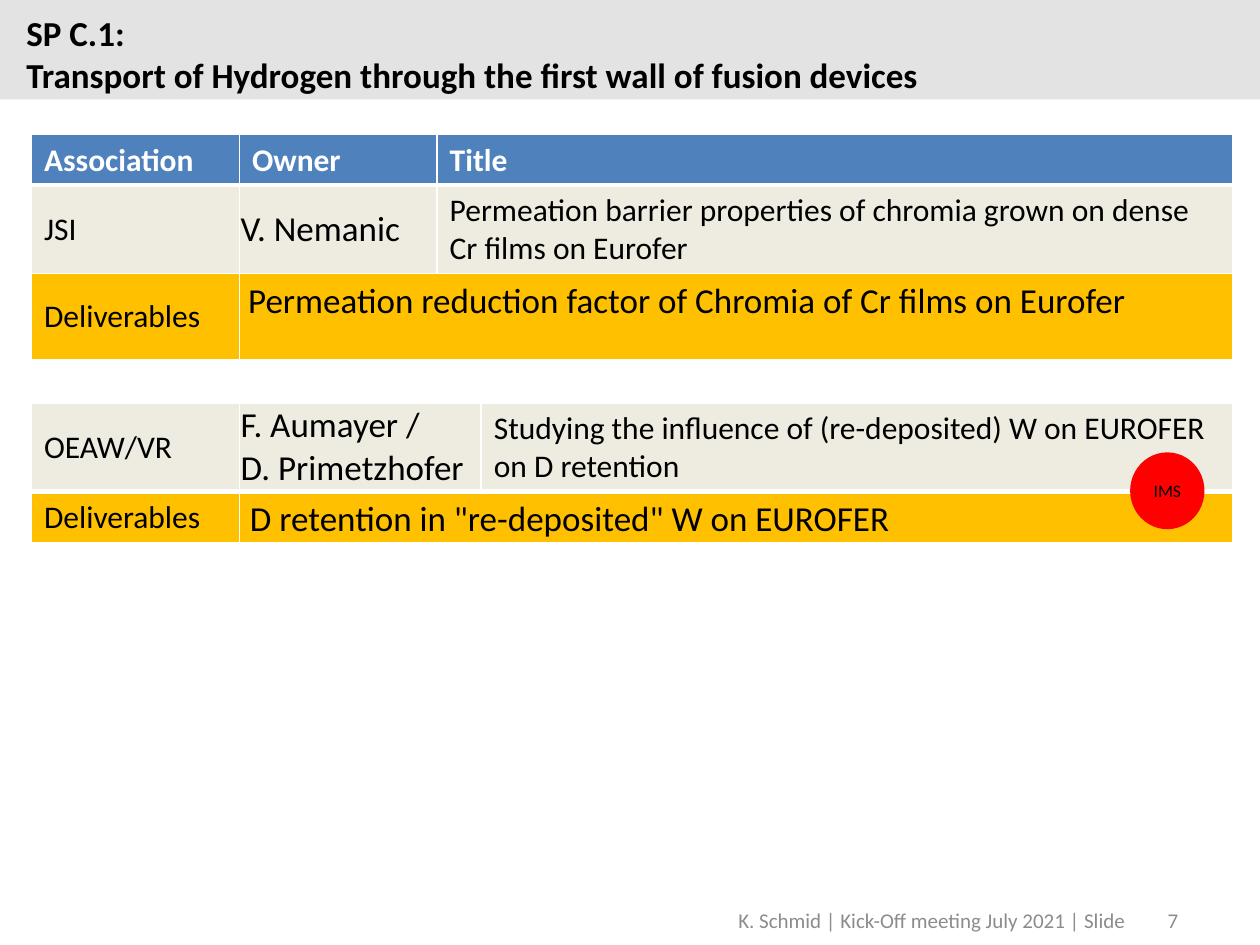
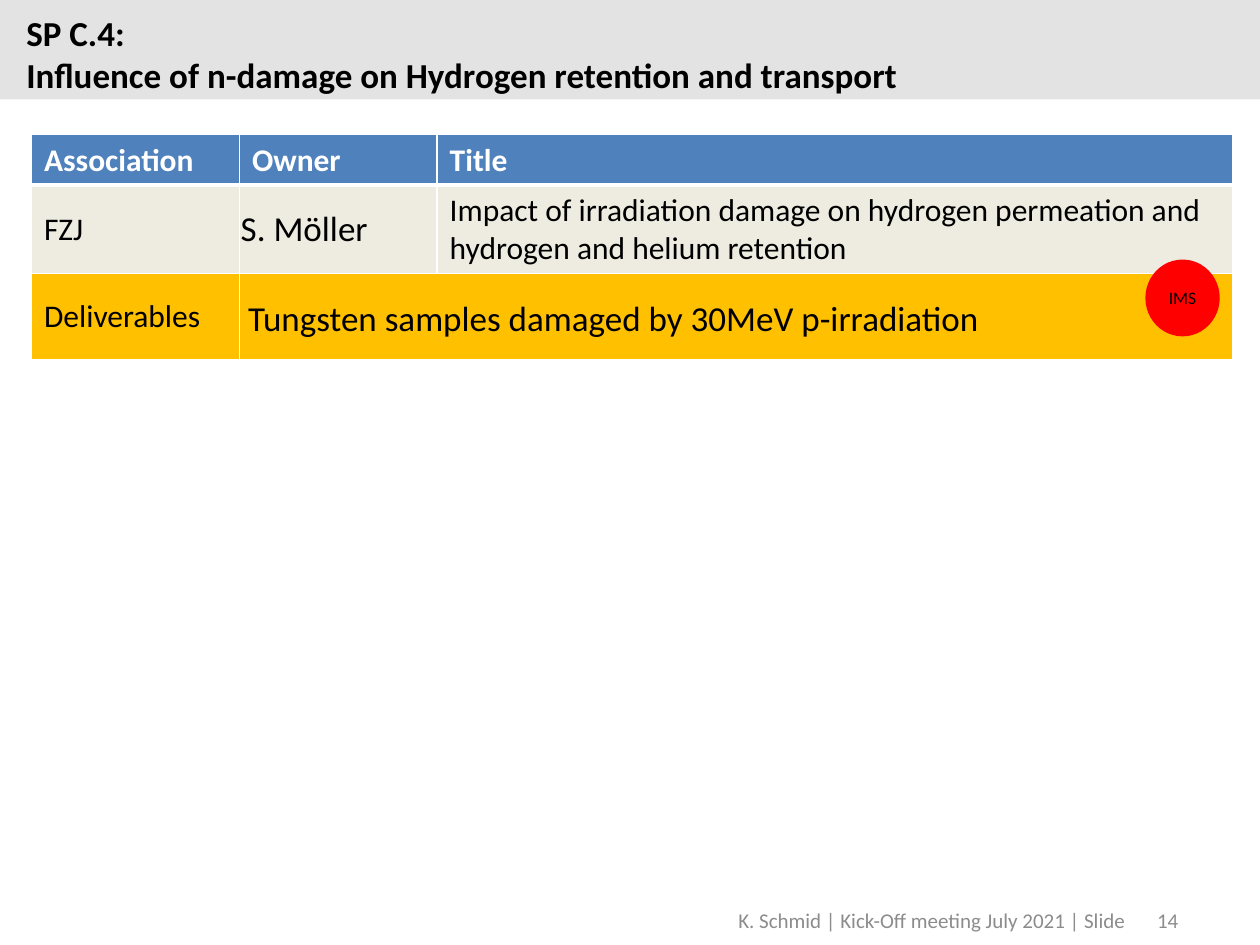
from lxml.etree import SubElement
from pptx import Presentation
from pptx.dml.color import RGBColor
from pptx.enum.shapes import MSO_SHAPE
from pptx.enum.text import MSO_ANCHOR, PP_ALIGN
from pptx.oxml.ns import qn
from pptx.util import Pt

FONT = "Calibri"
WHITE = RGBColor(0xFF, 0xFF, 0xFF)
BLACK = RGBColor(0, 0, 0)
BAND = RGBColor(0xE3, 0xE3, 0xE3)
GRAY = RGBColor(0x8C, 0x8C, 0x8C)
BLUE = RGBColor(0x4F, 0x81, 0xBD)
SAND = RGBColor(0xEE, 0xEC, 0xE1)
GOLD = RGBColor(0xFF, 0xC0, 0x00)
RED = RGBColor(0xFF, 0, 0)

WIDTH, HEIGHT = 720, 540
LEFT, SPAN = 18, 686.2
FIRST = 118.8
HEAD = ["Association", "Owner", "Title"]
TOP, MID = MSO_ANCHOR.TOP, MSO_ANCHOR.MIDDLE


class Deck:
    def __init__(self):
        self.prs = Presentation()
        self.prs.slide_width, self.prs.slide_height = Pt(WIDTH), Pt(HEIGHT)
        self.slide = None

    def start(self, title, number):
        """Add a slide with the title band and the footer."""
        self.slide = self.prs.slides.add_slide(self.prs.slide_layouts[6])
        self.shape(MSO_SHAPE.RECTANGLE, 0, 0, WIDTH, 56.8, BAND)
        self.text(title, 8, 3, 670, 55.4, 20, BLACK, bold=True)
        self.text(["K. Schmid | Kick-Off meeting July 2021 | Slide"],
                  381, 511.2, 303, 28.8, 12, GRAY, PP_ALIGN.CENTER, MID)
        self.text([number], 518.4, 511.2, 162, 28.8, 12, GRAY,
                  PP_ALIGN.RIGHT, MID)

    def put(self, frame, lines, size, color, align=PP_ALIGN.LEFT, bold=False):
        for i, line in enumerate(lines):
            para = frame.add_paragraph() if i else frame.paragraphs[0]
            para.text = line
            para.alignment = align
            font = para.font
            font.name, font.size, font.bold = FONT, Pt(size), bold
            font.color.rgb = color

    def text(self, lines, x, y, w, h, size, color,
             align=PP_ALIGN.LEFT, anchor=TOP, bold=False):
        box = self.slide.shapes.add_textbox(Pt(x), Pt(y), Pt(w), Pt(h))
        frame = box.text_frame
        frame.word_wrap = True
        frame.vertical_anchor = anchor
        self.put(frame, lines, size, color, align, bold)

    def shape(self, kind, x, y, w, h, fill):
        item = self.slide.shapes.add_shape(kind, Pt(x), Pt(y), Pt(w), Pt(h))
        item.shadow.inherit = False
        item.fill.solid()
        item.fill.fore_color.rgb = fill
        item.line.fill.background()
        return item

    def badge(self, x, y):
        frame = self.shape(MSO_SHAPE.OVAL, x, y, 42.5, 43.9, RED).text_frame
        frame.vertical_anchor = MID
        self.put(frame, ["IMS"], 10, BLACK, PP_ALIGN.CENTER)

    def edge(self, cell, row):
        """Draw white borders, thick below the first row."""
        props = cell._tc.get_or_add_tcPr()
        thick = {"lnB": row == 0, "lnT": row == 1}
        for side in ("lnL", "lnR", "lnT", "lnB"):
            width = Pt(3 if thick.get(side) else 1)
            line = SubElement(props, qn(f"a:{side}"), w=str(width))
            fill = SubElement(line, qn("a:solidFill"))
            SubElement(fill, qn("a:srgbClr"), val=str(WHITE))

    def cell(self, cell, text, size, color, anchor=MID, inset=None, bold=False):
        cell.vertical_anchor = anchor
        if inset is not None:
            cell.margin_left = cell.margin_right = Pt(inset)
            cell.margin_top = cell.margin_bottom = 0
        self.put(cell.text_frame, [text], size, color, bold=bold)

    def table(self, y, owner, heights, entry, goal, head=True, anchor=TOP,
              inset=5):
        """Add one association with its deliverable in a merged last row."""
        grid = self.slide.shapes.add_table(
            len(heights), 3, Pt(LEFT), Pt(y), Pt(SPAN), Pt(sum(heights))).table
        grid.first_row, grid.horz_banding = head, False
        for col, w in zip(grid.columns, (FIRST, owner, SPAN - FIRST - owner)):
            col.width = Pt(w)
        fills = [BLUE, SAND, GOLD][-len(heights):]
        for r, (h, fill) in enumerate(zip(heights, fills)):
            grid.rows[r].height = Pt(h)
            for c in range(3):
                cell = grid.cell(r, c)
                self.edge(cell, r)
                cell.fill.solid()
                cell.fill.fore_color.rgb = fill

        last = len(heights) - 1
        if head:
            for c, name in enumerate(HEAD):
                self.cell(grid.cell(0, c), name, 18, WHITE, TOP, bold=True)
        for c, (text, size, pad) in enumerate(
                zip(entry, (18, 20, 18), (None, 0.75, None))):
            self.cell(grid.cell(last - 1, c), text, size, BLACK, inset=pad)
        self.cell(grid.cell(last, 0), "Deliverables", 18, BLACK)
        wide = grid.cell(last, 1)
        wide.merge(grid.cell(last, 2))
        self.cell(wide, goal, 20, BLACK, anchor, inset)
        wide.text_frame.paragraphs[0].line_spacing = 1.15


def main():
    deck = Deck()
    tall = (28.8, 50, 49.5)

    # Hydrogen transport
    deck.start(["SP C.1:", "Transport of Hydrogen through the first wall "
                "of fusion devices"], "7")
    deck.table(77, 113, tall,
               ["JSI", "V. Nemanic", "Permeation barrier properties of chromia "
                "grown on dense Cr films on Eurofer"],
               "Permeation reduction factor of Chromia of Cr films on Eurofer")
    deck.table(230.4, 138.2, (50, 29.5),
               ["OEAW/VR", "F. Aumayer /\vD. Primetzhofer", "Studying the "
                "influence of (re-deposited) W on EUROFER on D retention"],
               'D retention in "re-deposited" W on EUROFER', head=False,
               inset=6)
    deck.badge(645.8, 258.5)

    # Neutron damage
    deck.start(["SP C.4:", "Influence of n-damage on Hydrogen retention "
                "and transport"], "14")
    deck.table(77, 113, tall,
               ["FZJ", "S. Möller", "Impact of irradiation damage on hydrogen "
                "permeation and hydrogen and helium retention"],
               "Tungsten samples damaged by 30MeV p-irradiation", anchor=MID)
    deck.badge(654.5, 148.3)

    deck.prs.save("out.pptx")


if __name__ == "__main__":
    main()
